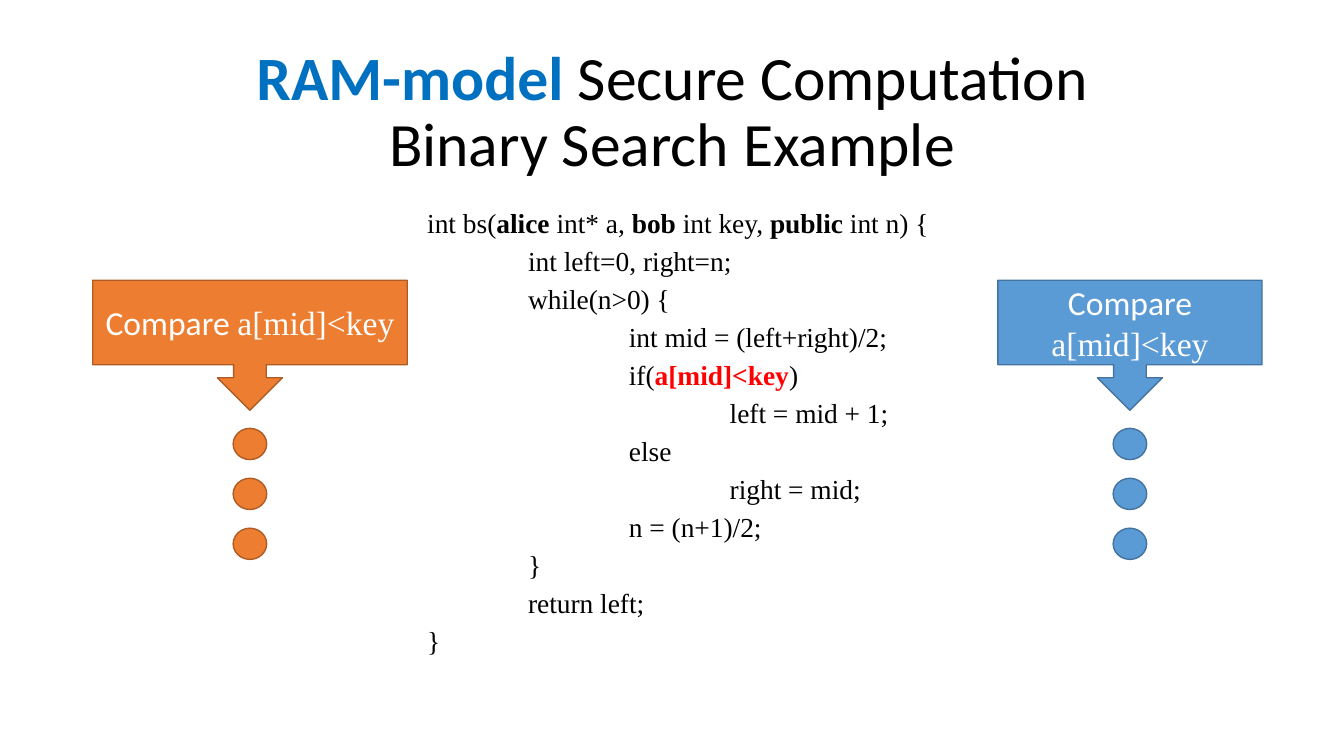
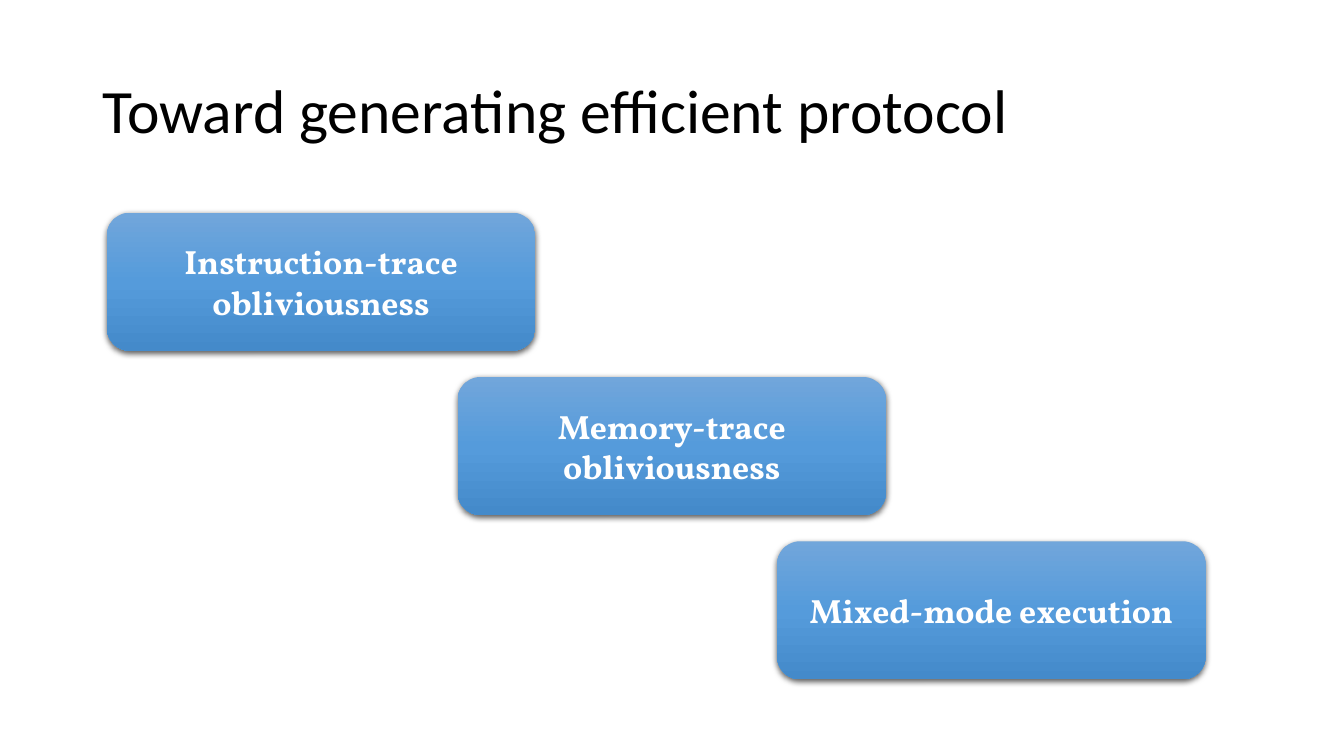
import copy

from pptx import Presentation
from pptx import util as u
from pptx.dml.color import RGBColor
from pptx.enum import shapes, text
from pptx.oxml import parse_xml
from pptx.oxml.ns import nsdecls, qn

SLIDE_W, SLIDE_H = u.Inches(13.33), u.Inches(7.5)
COL, ROW = SLIDE_W / 40, SLIDE_H / 30

BLACK = RGBColor(0x00, 0x00, 0x00)
WHITE = RGBColor(0xFF, 0xFF, 0xFF)
RED = RGBColor(0xFF, 0x00, 0x00)
TITLE_BLUE = RGBColor(0x00, 0x70, 0xC0)
ORANGE = RGBColor(0xED, 0x7D, 0x31)
ORANGE_EDGE = RGBColor(0xAF, 0x5C, 0x24)
BLUE = RGBColor(0x5B, 0x9B, 0xD5)
BLUE_EDGE = RGBColor(0x43, 0x73, 0x9E)
CARD_STOPS = [
    (0, RGBColor(0x71, 0xA6, 0xDB)),
    (0.5, RGBColor(0x55, 0x9B, 0xDB)),
    (1, RGBColor(0x44, 0x8A, 0xCA)),
]

SANS, SERIF, CARD_FONT = "Calibri", "Times New Roman", "Vollkorn"
CENTER, LEFT = text.PP_ALIGN.CENTER, text.PP_ALIGN.LEFT

CODE = [
    (0, ["int bs(", ("alice ", {"bold": True}), "int* a, ", ("bob ", {"bold": True}),
         "int key, ", ("public ", {"bold": True}), "int n) {"]),
    (1, ["int left=0, right=n;"]),
    (1, ["while(n>0) {"]),
    (2, ["int mid = (left+right)/2;"]),
    (2, ["if(", ("a[mid]<key", {"bold": True, "color": RED}), ")"]),
    (3, ["left = mid + 1;"]),
    (2, ["else"]),
    (3, ["right = mid;"]),
    (2, ["n = (n+1)/2;"]),
    (1, ["}"]),
    (1, ["return left;"]),
    (0, ["}"]),
]


def grid(x, y, w, h):
    return round(x * COL), round(y * ROW), round(w * COL), round(h * ROW)


def write(paragraph, pieces, *, size, font=SANS, color=BLACK, bold=False,
          align=LEFT, spacing=None, before=None, indent=0):
    paragraph.alignment = align
    paragraph.line_spacing = spacing
    if before is not None:
        paragraph.space_before = u.Pt(before)
    if indent:
        paragraph._p.get_or_add_pPr().set("marL", str(u.Inches(indent)))
    for piece in pieces:
        if piece == "\n":
            paragraph.add_line_break()
            continue
        words, special = (piece, {}) if isinstance(piece, str) else piece
        run = paragraph.add_run()
        run.text = words
        run.font.size = u.Pt(size)
        run.font.name = special.get("font", font)
        run.font.bold = special.get("bold", bold)
        run.font.color.rgb = special.get("color", color)


def text_frame(slide, place, anchor):
    frame = slide.shapes.add_textbox(*grid(*place)).text_frame
    frame.word_wrap = True
    frame.vertical_anchor = anchor
    return frame


def add_title(slide, pieces, align=LEFT):
    frame = text_frame(slide, (2.76, 1.6, 34.5, 5.8), text.MSO_ANCHOR.MIDDLE)
    write(frame.paragraphs[0], pieces, size=44, align=align, spacing=0.9)


def add_code(slide):
    frame = text_frame(slide, (12.42, 8.32, 17.28, 19.04), text.MSO_ANCHOR.TOP)
    for number, (depth, pieces) in enumerate(CODE):
        line = frame.add_paragraph() if number else frame.paragraphs[0]
        write(line, pieces, size=19.6, font=SERIF, spacing=0.73, before=10, indent=depth)


def add_solid(slide, kind, place, fill, edge):
    solid = slide.shapes.add_shape(kind, *grid(*place))
    solid.shadow.inherit = False
    solid.fill.solid()
    solid.fill.fore_color.rgb = fill
    solid.line.color.rgb = edge
    solid.line.width = u.Pt(1)
    return solid


def add_party(slide, x, width, fill, edge):
    callout = add_solid(slide, shapes.MSO_SHAPE.DOWN_ARROW_CALLOUT,
                        (x, 11.12, width, 5.16), fill, edge)
    callout.text_frame.word_wrap = True
    callout.text_frame.vertical_anchor = text.MSO_ANCHOR.MIDDLE
    write(callout.text_frame.paragraphs[0], ["Compare ", ("a[mid]<key", {"font": SERIF})],
          size=24, color=WHITE, align=CENTER)
    for step in range(3):
        add_solid(slide, shapes.MSO_SHAPE.OVAL,
                  (x + width / 2 - 0.5, 17 + 1.98 * step, 1, 1.24), fill, edge)


def add_card(slide, x, y, label):
    card = slide.shapes.add_shape(shapes.MSO_SHAPE.ROUNDED_RECTANGLE, *grid(x, y, 12.75, 5.48))
    card.line.fill.background()
    card.fill.gradient()
    card.fill.gradient_angle = 270
    stop_list = card._element.spPr.find(".//" + qn("a:gsLst"))
    stop_list.insert(1, copy.deepcopy(stop_list[0]))
    for stop, (position, color) in zip(card.fill.gradient_stops, CARD_STOPS):
        stop.position = position
        stop.color.rgb = color
    card._element.spPr.append(parse_xml(
        f'<a:effectLst {nsdecls("a")}>'
        f'<a:outerShdw blurRad="{u.Pt(4.5)}" dist="{u.Pt(1.5)}" dir="5400000" '
        'algn="ctr" rotWithShape="0"><a:srgbClr val="000000"><a:alpha val="63000"/>'
        '</a:srgbClr></a:outerShdw></a:effectLst>'))
    card.text_frame.word_wrap = True
    card.text_frame.vertical_anchor = text.MSO_ANCHOR.MIDDLE
    write(card.text_frame.paragraphs[0], [label], size=24, font=CARD_FONT,
          color=WHITE, bold=True, align=CENTER)


def search_slide(slide):
    add_title(slide, [("RAM-model", {"bold": True, "color": TITLE_BLUE}),
                      " Secure Computation", "\n", "Binary Search Example"], CENTER)
    add_code(slide)
    add_party(slide, 2.76, 9.36, ORANGE, ORANGE_EDGE)
    add_party(slide, 29.7, 7.86, BLUE, BLUE_EDGE)


def protocol_slide(slide):
    add_title(slide, ["Toward generating efficient protocol"])
    cards = [(3.18, "Instruction-trace obliviousness"),
             (13.62, "Memory-trace obliviousness"),
             (23.13, "Mixed-mode execution")]
    for step, (x, label) in enumerate(cards):
        add_card(slide, x, 8.44 + 6.52 * step, label)


def main():
    deck = Presentation()
    deck.slide_width, deck.slide_height = SLIDE_W, SLIDE_H
    for build in (search_slide, protocol_slide):
        build(deck.slides.add_slide(deck.slide_layouts[6]))
    deck.save("out.pptx")


if __name__ == "__main__":
    main()
